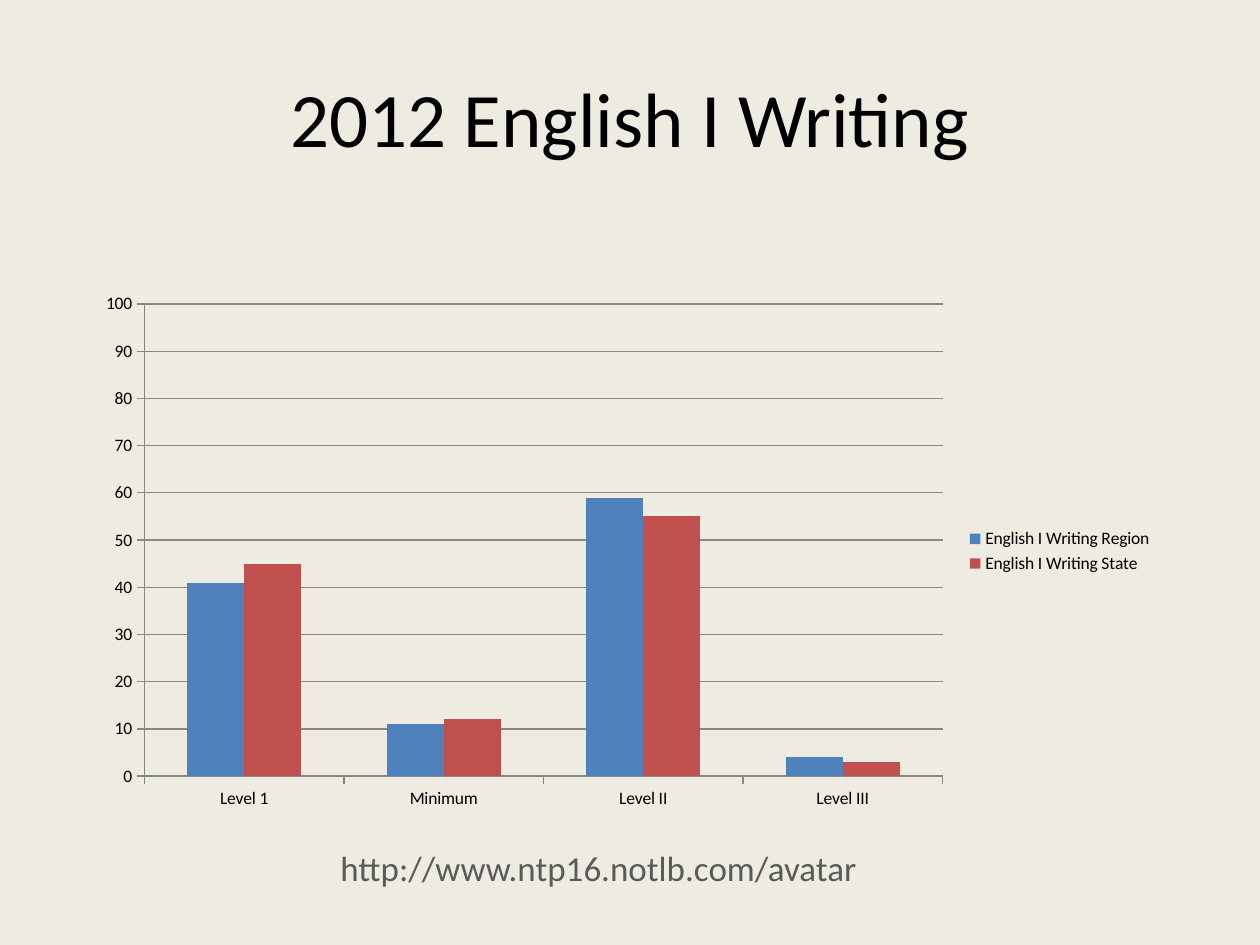
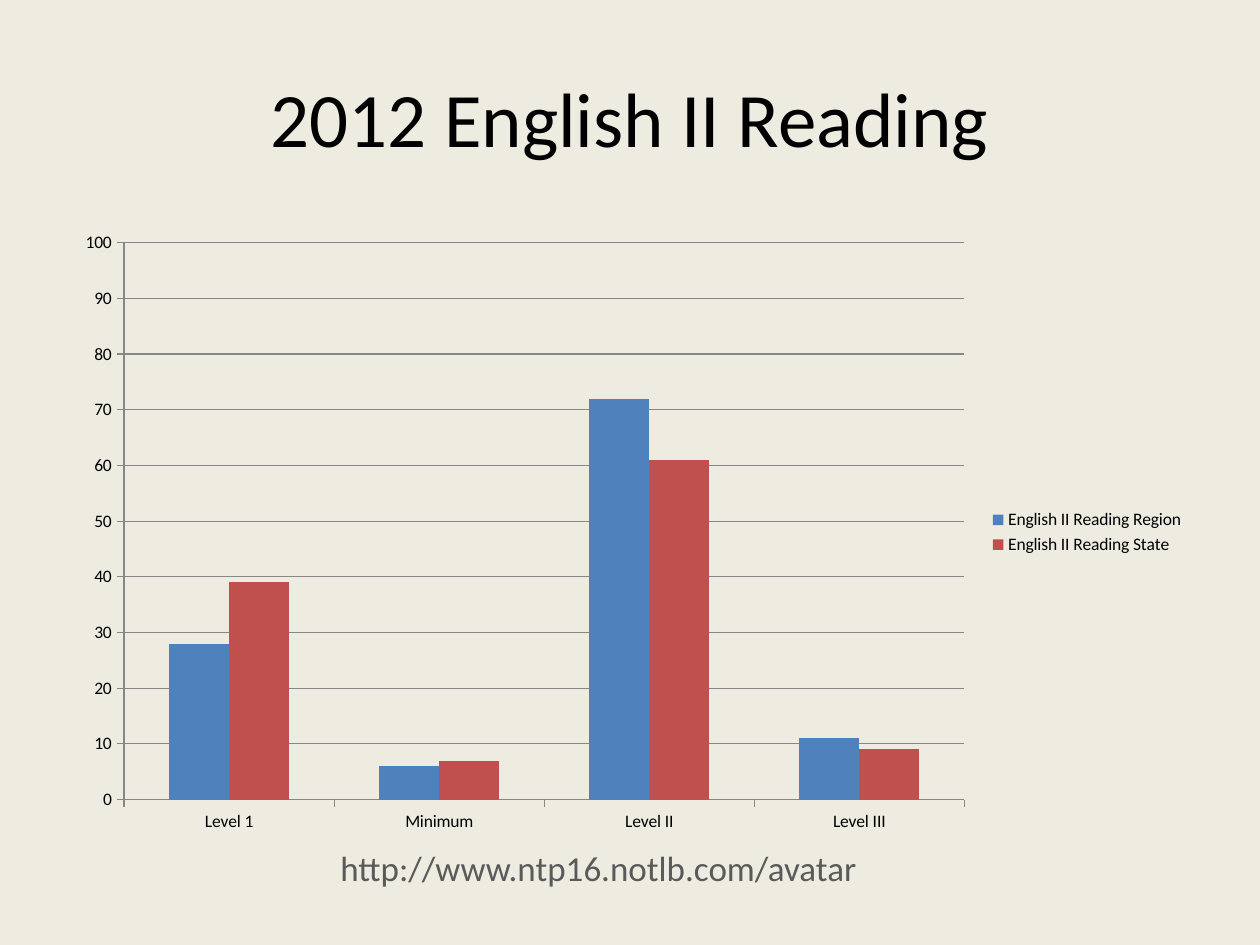
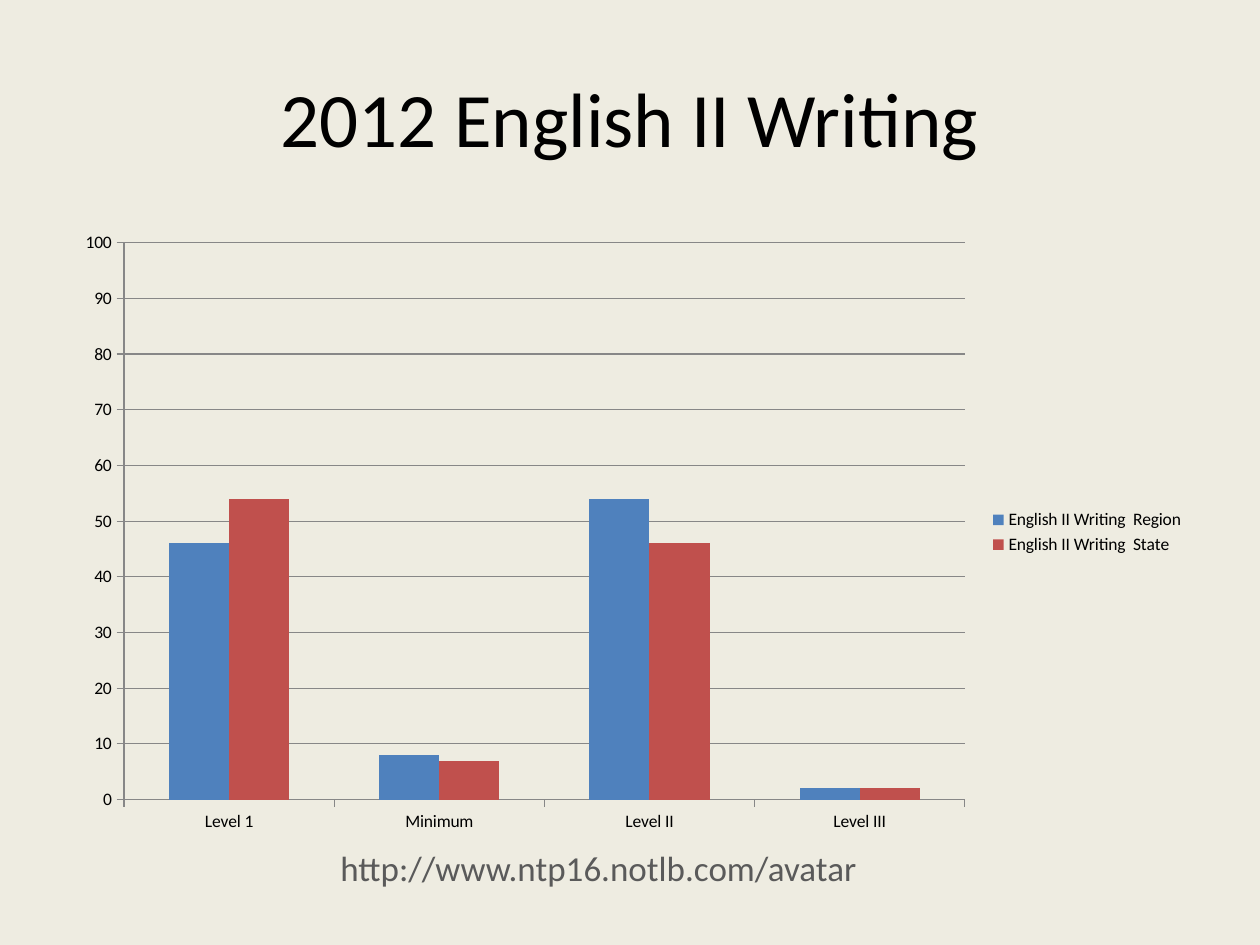
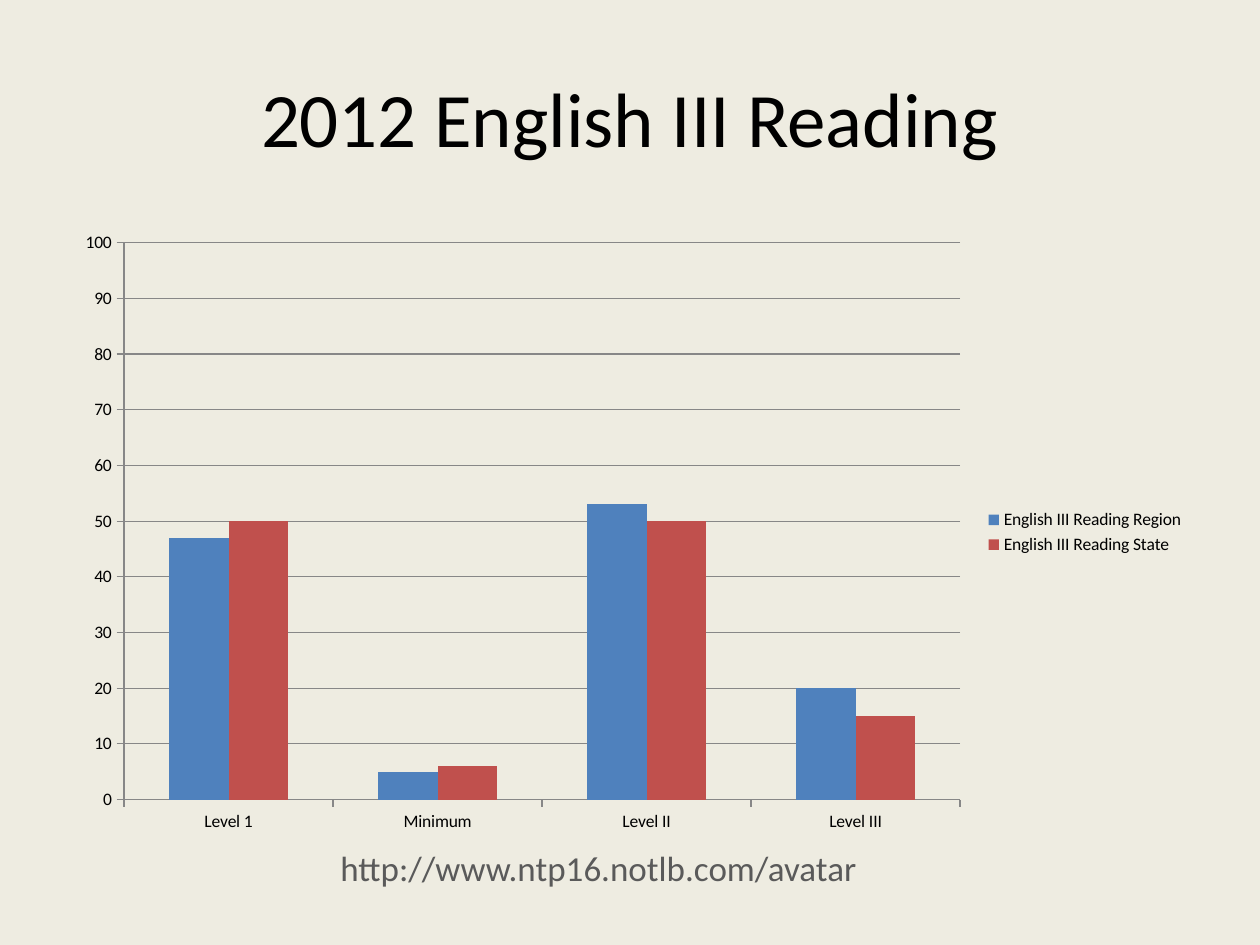
from pptx import Presentation
from pptx import util as u
from pptx.chart import data as cd
from pptx.dml import color as dc
from pptx.enum import chart as ec, text as et

FONT = "Calibri"
PAPER, INK, GREY, RULE = "EEECE1", "000000", "5A5A5A", "878787"
BARS = ("4F81BD", "C0504D")
LEVELS = ("Level 1", "Minimum", "Level II", "Level III")
LINK = "http://www.ntp16.notlb.com/avatar"
WIDE = (0.5, 1.75, 9, 4.95)
SMALL = (0.67, 2.25, 8.58, 4.25)
TESTS = (
    ("English I Writing", SMALL, (41, 11, 59, 4), (45, 12, 55, 3)),
    ("English II Reading", WIDE, (28, 6, 72, 11), (39, 7, 61, 9)),
    ("English II Writing ", WIDE, (46, 8, 54, 2), (54, 7, 46, 2)),
    ("English III Reading", WIDE, (47, 5, 53, 20), (50, 6, 50, 15)),
)


def rgb(code):
    """Turn a hex string into a colour."""
    return dc.RGBColor.from_string(code)


def put(item, values):
    """Set every attribute in a dict of format values."""
    for key, value in values.items():
        setattr(item, key, value)


def box(*sides):
    """Turn left, top, width and height into lengths."""
    return [u.Inches(side) for side in sides]


class Deck:
    """Hold the deck's style and the current slide."""

    def __init__(self):
        """Start an empty deck with its size and background."""
        self.deck = Presentation()
        put(self.deck, {"slide_width": u.Inches(10), "slide_height": u.Inches(7.5)})
        fill = self.deck.slide_master.background.fill
        fill.solid()
        fill.fore_color.rgb = rgb(PAPER)

    def font(self, font, size, color):
        """Format a font."""
        put(font, {"name": FONT, "size": u.Pt(size)})
        font.color.rgb = rgb(color)

    def label(self, shape, words, size, color, **frame):
        """Fill a shape with one centred line."""
        put(shape.text_frame, {"word_wrap": True, **frame})
        line = shape.text_frame.paragraphs[0]
        line.alignment = et.PP_ALIGN.CENTER
        run = line.add_run()
        run.text = words
        self.font(run.font, size, color)

    def page(self, title):
        """Add a slide with its title and footer."""
        self.slide = self.deck.slides.add_slide(self.deck.slide_layouts[5])
        head = self.slide.shapes.title
        put(head, dict(zip(("left", "top", "width", "height"), box(0.5, 0.3, 9, 1.25))))
        self.label(head, title, 44, INK, vertical_anchor=et.MSO_ANCHOR.MIDDLE)
        foot = self.slide.shapes.add_textbox(*box(1.96, 6.67, 5.58, 0.44))
        self.label(foot, LINK, 20, GREY, auto_size=et.MSO_AUTO_SIZE.SHAPE_TO_FIT_TEXT)

    def line(self, form):
        """Format a chart rule."""
        form.line.width = u.Pt(0.75)
        form.line.color.rgb = rgb(RULE)

    def chart(self, place, series):
        """Add a column chart of scores by level."""
        data = cd.CategoryChartData()
        data.categories = LEVELS
        for name, scores in series.items():
            data.add_series(name, scores)
        kind = ec.XL_CHART_TYPE.COLUMN_CLUSTERED
        chart = self.slide.shapes.add_chart(kind, *box(*place), data).chart
        put(chart, {"has_title": False, "has_legend": True})
        put(chart.legend, {"position": ec.XL_LEGEND_POSITION.RIGHT,
                           "include_in_layout": False})
        self.font(chart.font, 10, INK)
        plot = chart.plots[0]
        put(plot, {"gap_width": 150, "overlap": 0, "vary_by_categories": False})
        for bar, color in zip(plot.series, BARS):
            bar.format.fill.solid()
            bar.format.fill.fore_color.rgb = rgb(color)
        for axis in (chart.category_axis, chart.value_axis):
            put(axis, {"major_tick_mark": ec.XL_TICK_MARK.OUTSIDE,
                       "minor_tick_mark": ec.XL_TICK_MARK.NONE})
            self.line(axis.format)
        put(chart.value_axis, {"minimum_scale": 0, "maximum_scale": 100,
                               "major_unit": 10, "has_major_gridlines": True})
        self.line(chart.value_axis.major_gridlines.format)


def main():
    """Build one slide for each test."""
    deck = Deck()
    for test, place, region, state in TESTS:
        deck.page(f"2012 {test.strip()}")
        deck.chart(place, {f"{test} Region": region, f"{test} State": state})
    deck.deck.save("out.pptx")


if __name__ == "__main__":
    main()
